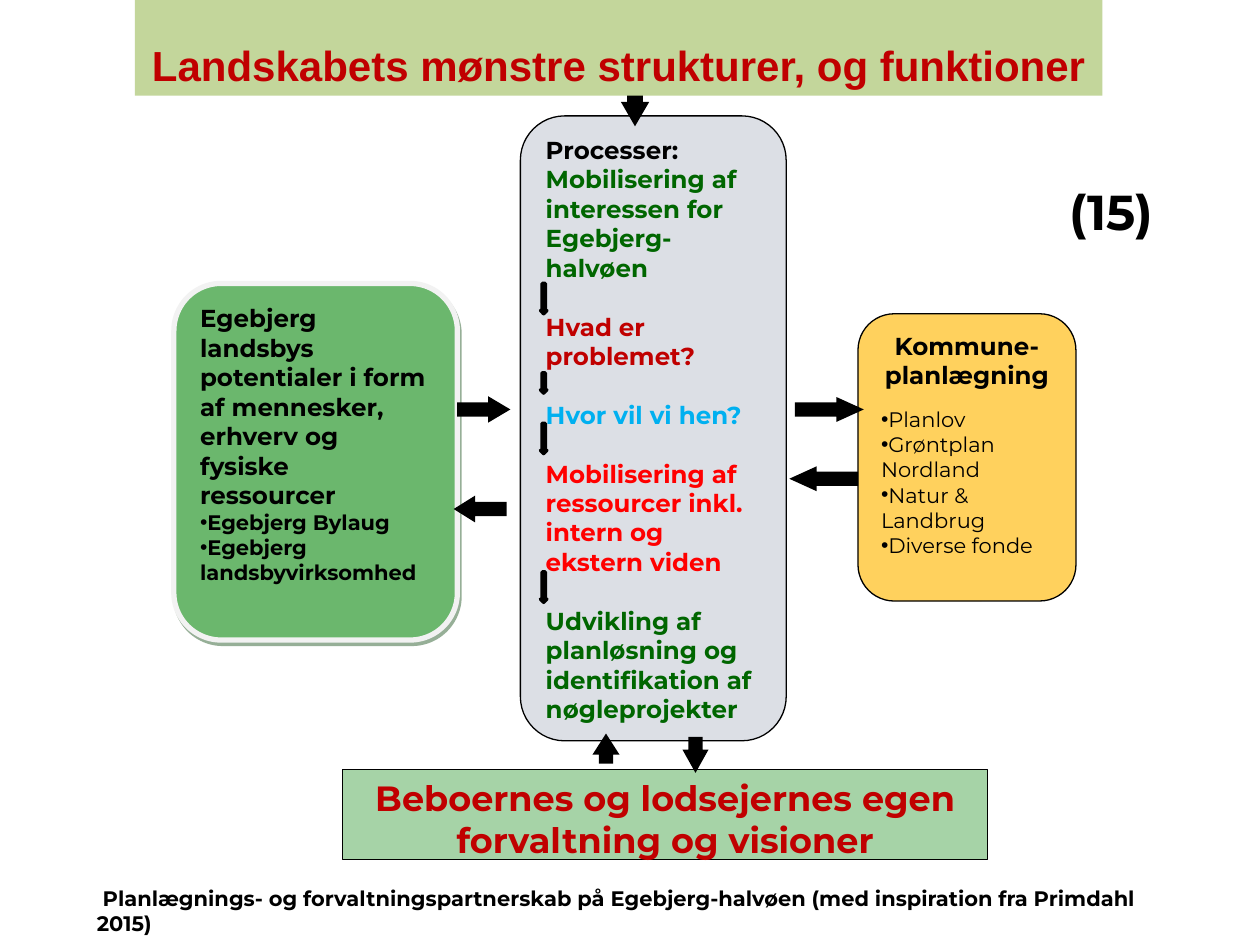
from lxml.etree import SubElement
from pptx import Presentation
from pptx.dml.color import RGBColor
from pptx.enum.shapes import MSO_SHAPE
from pptx.enum.text import MSO_ANCHOR, PP_ALIGN
from pptx.oxml.ns import qn
from pptx.util import Inches, Pt

BLACK = RGBColor(0x00, 0x00, 0x00)
WHITE = RGBColor(0xFF, 0xFF, 0xFF)
DARK_RED = RGBColor(0xC0, 0x00, 0x00)
RED = RGBColor(0xFF, 0x00, 0x00)
DARK_GREEN = RGBColor(0x00, 0x66, 0x00)
SKY = RGBColor(0x00, 0xB0, 0xF0)
BLUE = RGBColor(0x4F, 0x81, 0xBD)
PALE_GREY = RGBColor(0xDC, 0xDF, 0xE5)
OFF_WHITE = RGBColor(0xF2, 0xF2, 0xF2)
GREEN = RGBColor(0x6B, 0xB7, 0x6D)
YELLOW = RGBColor(0xFF, 0xD1, 0x5D)
MINT = RGBColor(0xA6, 0xD3, 0xA7)
OLIVE = RGBColor(0xC3, 0xD6, 0x9B)

CENTER = {"alignment": PP_ALIGN.CENTER}


def add_panel(page, kind, box, fill, line=None, width=0.75):
    panel = page.shapes.add_shape(kind, *map(Inches, box))
    panel.shadow.inherit = False
    panel.fill.solid()
    panel.fill.fore_color.rgb = fill
    if line is None:
        panel.line.fill.background()
    else:
        panel.line.color.rgb = line
        panel.line.width = Pt(width)
    panel.text_frame.word_wrap = True
    panel.text_frame.vertical_anchor = MSO_ANCHOR.TOP
    return panel


def write(frame, index, text, size, color=BLACK, bold=True, font="Montserrat",
          bullet=False, layout=None):
    para = frame.paragraphs[0] if index == 0 else frame.add_paragraph()
    for name, value in {"alignment": PP_ALIGN.LEFT, **(layout or {})}.items():
        setattr(para, name, value)
    if bullet:
        properties = para._p.get_or_add_pPr()
        SubElement(properties, qn("a:buFont")).set("typeface", "Arial")
        SubElement(properties, qn("a:buChar")).set("char", "•")
    span = para.add_run()
    span.text = text
    span.font.color.rgb = color
    for name, value in {"name": font, "size": Pt(size), "bold": bold}.items():
        setattr(span.font, name, value)


def add_shadow(panel):
    effects = panel._element.spPr.find(qn("a:effectLst"))
    shadow = SubElement(effects, qn("a:outerShdw"))
    for name, value in {"dist": Pt(2.2), "dir": 63 * 60000, "algn": "ctr", "rotWithShape": 0}.items():
        shadow.set(name, str(value))
    color = SubElement(shadow, qn("a:srgbClr"))
    color.set("val", "2F6130")
    SubElement(color, qn("a:alpha")).set("val", "50000")


def add_title(page, box):
    panel = add_panel(page, MSO_SHAPE.RECTANGLE, box, OLIVE)
    panel.text_frame.word_wrap = False
    panel.text_frame.vertical_anchor = MSO_ANCHOR.BOTTOM
    write(panel.text_frame, 0, "Landskabets mønstre strukturer, og funktioner", 24, DARK_RED,
          font="Arial", layout=CENTER)


def add_processes(page, box):
    panel = add_panel(page, MSO_SHAPE.ROUNDED_RECTANGLE, box, PALE_GREY, BLACK)
    write(panel.text_frame, 0, "Processer:", 14)
    steps = [
        ("Mobilisering af interessen for Egebjerg-halvøen", DARK_GREEN),
        ("Hvad er problemet?", DARK_RED),
        ("Hvor vil vi hen?", SKY),
        ("Mobilisering af ressourcer inkl. intern og ekstern viden", RED),
        ("Udvikling af planløsning og identifikation af nøgleprojekter", DARK_GREEN),
    ]
    for index, (text, color) in enumerate(steps, 1):
        gap = Pt(0 if index == 1 else 16.8)
        write(panel.text_frame, index, text, 14, color, layout={"space_before": gap})


def add_village(page, box):
    panel = add_panel(page, MSO_SHAPE.ROUNDED_RECTANGLE, box, GREEN, OFF_WHITE, 3)
    add_shadow(panel)
    write(panel.text_frame, 0, "Egebjerg landsbys potentialer i form af mennesker, "
          "erhverv og fysiske ressourcer", 14)
    for index, text in enumerate(["Egebjerg Bylaug", "Egebjerg landsbyvirksomhed"], 1):
        write(panel.text_frame, index, text, 12, bullet=True)


def add_municipality(page, box):
    panel = add_panel(page, MSO_SHAPE.ROUNDED_RECTANGLE, box, YELLOW, BLACK)
    write(panel.text_frame, 0, "Kommune- planlægning", 14,
          layout={**CENTER, "space_after": Pt(9.75)})
    topics = ["Planlov", "Grøntplan Nordland", "Natur & Landbrug", "Diverse fonde"]
    for index, text in enumerate(topics, 1):
        write(panel.text_frame, index, text, 12, bold=False, bullet=True)


def add_residents(page, box):
    panel = add_panel(page, MSO_SHAPE.RECTANGLE, box, MINT, BLACK)
    write(panel.text_frame, 0, "Beboernes og lodsejernes egen forvaltning og visioner", 20,
          DARK_RED, layout=CENTER)


def add_label(page, box, text, size):
    label = page.shapes.add_textbox(*map(Inches, box))
    label.text_frame.word_wrap = True
    write(label.text_frame, 0, text, size)


def add_flow_arrows(page):
    right, left = MSO_SHAPE.RIGHT_ARROW, MSO_SHAPE.LEFT_ARROW
    up, down = MSO_SHAPE.UP_ARROW, MSO_SHAPE.DOWN_ARROW
    arrows = [
        (right, (3.66, 3.2, 0.33, 0.1), 0.84, 4.5),
        (right, (6.34, 3.2, 0.44, 0.1), 1.1, 4.5),
        (left, (6.34, 3.75, 0.44, 0.1), 1.1, 4.5),
        (left, (3.66, 3.99, 0.33, 0.1), 0.8, 4.5),
        (up, (4.76, 5.88, 0.1, 0.15), 0.78, 4.5),
        (down, (5.47, 5.88, 0.1, 0.19), 0.89, 4.5),
        (down, (5, 0.76, 0.08, 0.16), 0.86, 6),
    ]
    for kind, box, head, width in arrows:
        arrow = add_panel(page, kind, box, WHITE, BLACK, width)
        arrow.adjustments[1] = head
        SubElement(arrow.line._get_or_add_ln(), qn("a:miter")).set("lim", "800000")


def add_step_arrows(page, left):
    steps = [(2.25, 0.24, WHITE), (2.96, 0.16, BLUE), (3.36, 0.24, BLUE), (4.54, 0.24, BLUE)]
    for top, height, fill in steps:
        add_panel(page, MSO_SHAPE.DOWN_ARROW, (left, top, 0.05, height), fill, BLACK, 2)


def main():
    deck = Presentation()
    deck.slide_width, deck.slide_height = Inches(10), Inches(7.5)
    page = deck.slides.add_slide(deck.slide_layouts[6])
    add_processes(page, (4.13, 0.92, 2.11, 4.96))
    add_village(page, (1.38, 2.25, 2.25, 2.83))
    add_municipality(page, (6.81, 2.49, 1.73, 2.28))
    add_residents(page, (2.72, 6.11, 5.12, 0.71))
    add_flow_arrows(page)
    add_label(page, (0.67, 6.98, 8.9, 0.5), " Planlægnings- og forvaltningspartnerskab på "
              "Egebjerg-halvøen (med inspiration fra Primdahl 2015)", 12)
    add_title(page, (1.07, 0, 7.68, 0.76))
    add_label(page, (8.39, 1.39, 1.18, 0.57), "(15)", 28)
    add_step_arrows(page, 4.29)
    deck.save("out.pptx")


if __name__ == "__main__":
    main()
